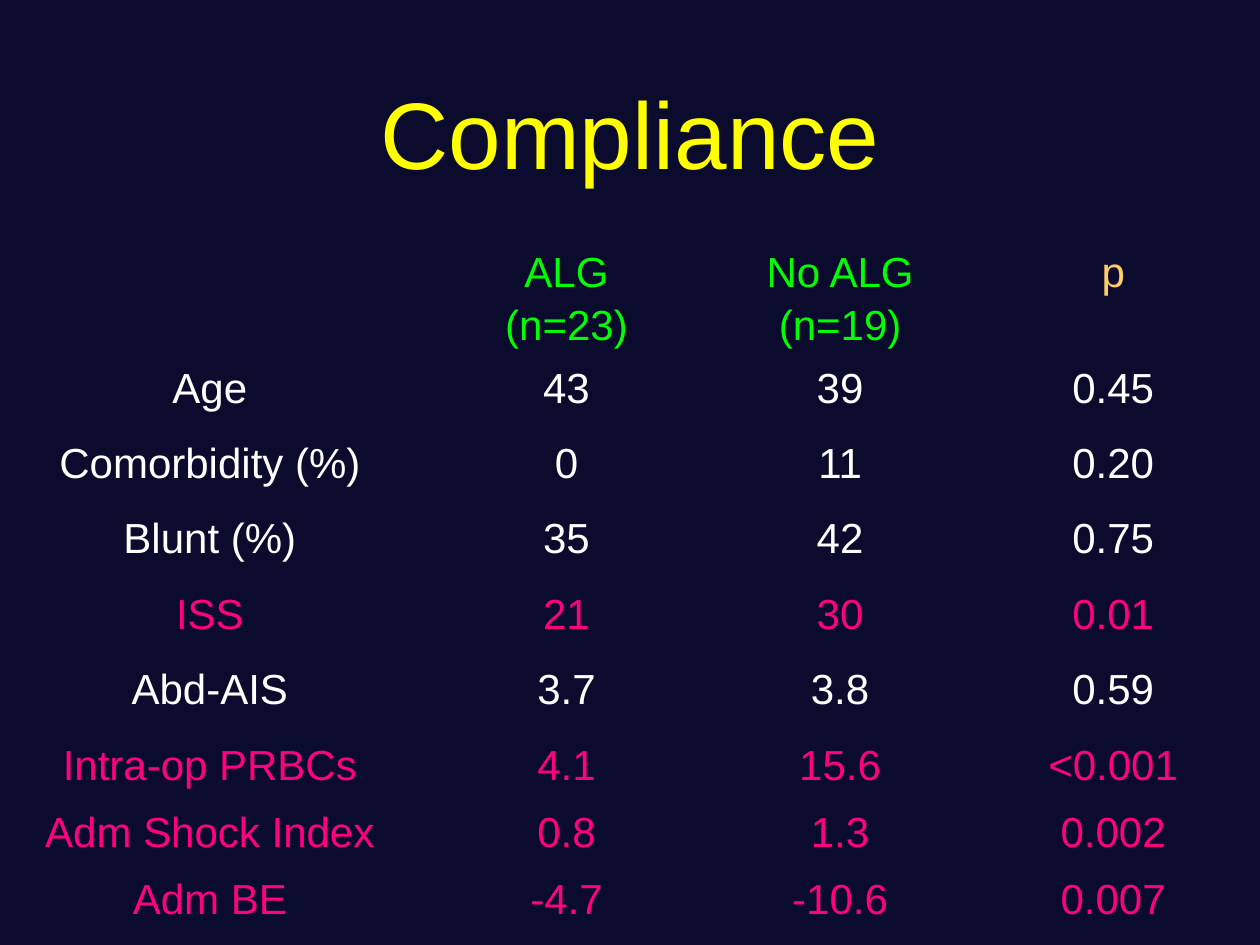
"""Build the Compliance slide comparing the ALG and No ALG groups."""
import pptx
import pptx.dml.color
import pptx.enum.text
import pptx.util
from pptx.util import Cm

RGBColor = pptx.dml.color.RGBColor
NAVY = RGBColor(0x0A, 0x0B, 0x2D)
YELLOW = RGBColor(0xFF, 0xFF, 0x00)
GREEN = RGBColor(0x00, 0xFF, 0x00)
ORANGE = RGBColor(0xFF, 0xCC, 0x66)
WHITE = RGBColor(0xFF, 0xFF, 0xFF)
PINK = RGBColor(0xFF, 0x00, 0x80)
NO_STYLE_NO_GRID = "{2D5ABB26-0587-4C30-8999-92F81FD0307C}"

HEADER = ["", "ALG\n(n=23)", "No ALG\n(n=19)", "p"]
HEADER_COLORS = [WHITE, GREEN, GREEN, ORANGE]
ROWS = [
    (WHITE, ["Age", "43", "39", "0.45"]),
    (WHITE, ["Comorbidity (%)", "0", "11", "0.20"]),
    (WHITE, ["Blunt (%)", "35", "42", "0.75"]),
    (PINK, ["ISS", "21", "30", "0.01"]),
    (WHITE, ["Abd-AIS", "3.7", "3.8", "0.59"]),
    (PINK, ["Intra-op PRBCs", "4.1", "15.6", "<0.001"]),
    (PINK, ["Adm Shock Index", "0.8", "1.3", "0.002"]),
    (PINK, ["Adm BE", "-4.7", "-10.6", "0.007"]),
]
COL_WIDTHS = [8.46, 5.92, 5.11, 5.9]
ROW_HEIGHTS = [2.34] + [1.52] * 5 + [1.35] * 3


class Deck:
    """Hold the text style and the current slide."""

    font = "Arial"
    title_size = 54
    cell_size = 24
    line_spacing = 1.15

    def __init__(self):
        self.prs = pptx.Presentation()
        self.prs.slide_width, self.prs.slide_height = Cm(25.4), Cm(19.05)
        self.s = self.prs.slides.add_slide(self.prs.slide_layouts[5])
        self.s.background.fill.solid()
        self.s.background.fill.fore_color.rgb = NAVY

    def style(self, p, size, color):
        p.alignment = pptx.enum.text.PP_ALIGN.CENTER
        p.font.name = self.font
        p.font.size = pptx.util.Pt(size)
        p.font.color.rgb = color

    def title(self, text, left, top, width, height):
        sp = self.s.shapes.title
        sp.left, sp.top, sp.width, sp.height = map(Cm, (left, top, width, height))
        tf = sp.text_frame
        tf.text = text
        tf.vertical_anchor = pptx.enum.text.MSO_ANCHOR.MIDDLE
        self.style(tf.paragraphs[0], self.title_size, YELLOW)

    def table(self, rows, colors, left, top):
        frame = self.s.shapes.add_table(
            len(rows), len(COL_WIDTHS), Cm(left), Cm(top),
            Cm(sum(COL_WIDTHS)), Cm(sum(ROW_HEIGHTS)))
        table = frame.table
        table.first_row = table.horz_banding = False
        table._tbl.tblPr.find(pptx.oxml.ns.qn("a:tableStyleId")).text = NO_STYLE_NO_GRID
        for column, width in zip(table.columns, COL_WIDTHS):
            column.width = Cm(width)
        for row, height, texts, row_colors in zip(table.rows, ROW_HEIGHTS, rows, colors):
            row.height = Cm(height)
            for cell, text, color in zip(row.cells, texts, row_colors):
                self.cell(cell, text, color)

    def cell(self, cell, text, color):
        cell.fill.background()
        cell.margin_left = cell.margin_right = Cm(0.18)
        cell.margin_top = cell.margin_bottom = 0
        cell.text = text
        for p in cell.text_frame.paragraphs:
            p.line_spacing = self.line_spacing
            self.style(p, self.cell_size, color)


def main():
    deck = Deck()
    deck.title("Compliance", 0, 1.07, 25.4, 3.18)
    rows = [HEADER] + [texts for _, texts in ROWS]
    colors = [HEADER_COLORS] + [[color] * len(HEADER) for color, _ in ROWS]
    deck.table(rows, colors, 0, 4.88)
    deck.prs.save("out.pptx")


if __name__ == "__main__":
    main()
